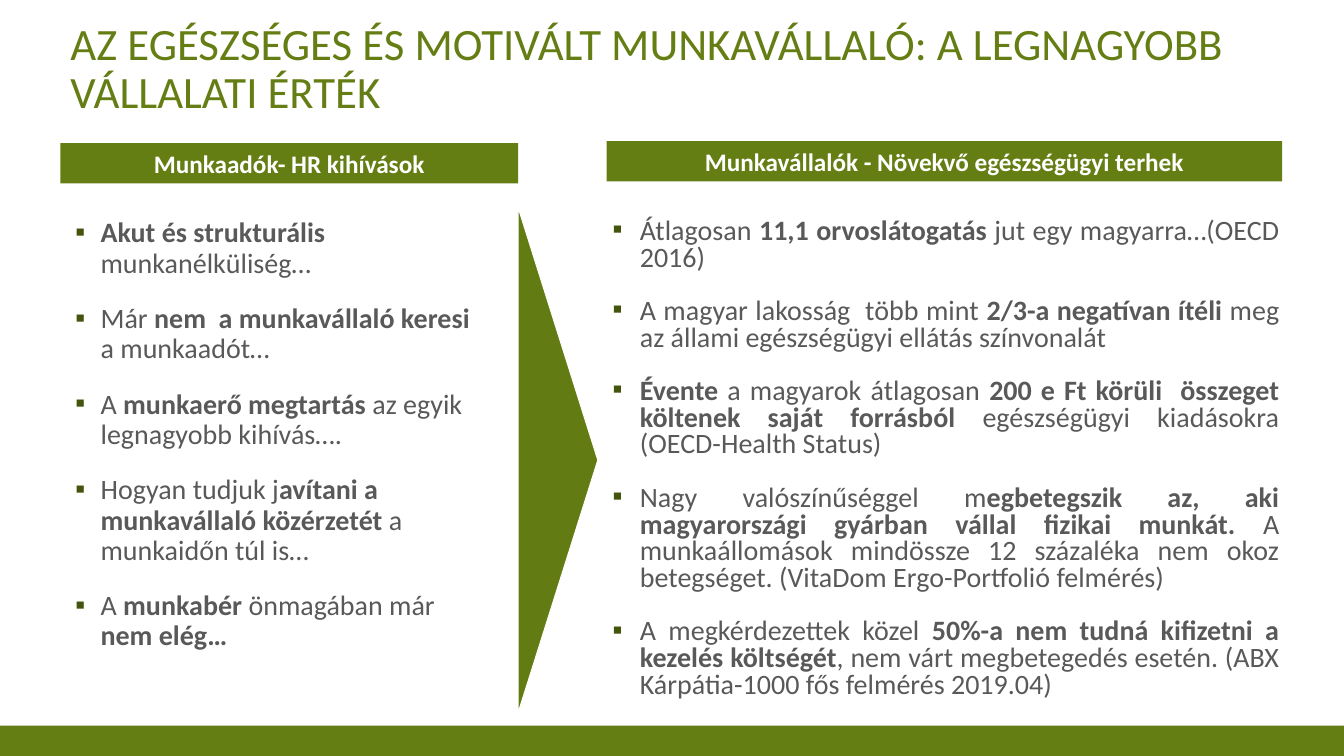
from lxml.etree import SubElement
from pptx import Presentation
from pptx.dml.color import RGBColor
from pptx.enum.shapes import MSO_SHAPE as SHAPE
from pptx.enum.text import MSO_ANCHOR as ANCHOR, PP_ALIGN as ALIGN
from pptx.oxml.ns import qn
from pptx.util import Pt

GREEN, ARROW_GREEN, BULLET_GREEN = "657E14", "627B13", "43540D"
GREY, WHITE = "595959", "FFFFFF"

EMPLOYERS = [
    "**Akut és strukturális **munkanélküliség…",
    "Már **nem  a munkavállaló keresi **a munkaadót…",
    "A **munkaerő megtartás** az egyik legnagyobb kihívás….",
    "Hogyan tudjuk j**avítani a munkavállaló közérzetét** a munkaidőn túl is…",
    "A **munkabér** önmagában már **nem elég…**",
]
EMPLOYEES = [
    "Átlagosan **11,1 orvoslátogatás** jut egy magyarra…(OECD 2016)",
    "A magyar lakosság  több mint **2/3-a negatívan ítéli** meg az állami "
    "egészségügyi ellátás színvonalát",
    "**Évente** a magyarok átlagosan **200 e Ft körüli  összeget költenek saját "
    "forrásból** egészségügyi kiadásokra (OECD-Health Status)",
    "Nagy valószínűséggel m**egbetegszik az, aki magyarországi gyárban vállal "
    "fizikai munkát. **A munkaállomások mindössze 12 százaléka nem okoz "
    "betegséget. (VitaDom Ergo-Portfolió felmérés)",
    "A megkérdezettek közel **50%-a nem tudná kifizetni a kezelés költségét**, "
    "nem várt megbetegedés esetén. (ABX Kárpátia-1000 fős felmérés 2019.04)",
]


def rgb(value):
    """Turn a hex string into a colour."""
    return RGBColor.from_string(value)


def set_all(obj, values):
    """Set every attribute in a dict of format values."""
    for name, value in values.items():
        setattr(obj, name, value)


def add_runs(p, text, size, color):
    """Write text whose bold parts stand between double asterisks."""
    for i, part in enumerate(text.split("**")):
        if part:
            r = p.add_run()
            r.text = part
            set_all(r.font, {"size": Pt(size), "name": "Calibri", "bold": i % 2 == 1})
            r.font.color.rgb = rgb(color)


def add_bullet(p, hanging):
    """Give a paragraph a green square bullet."""
    pPr = p._p.get_or_add_pPr()
    pPr.set("marL", str(Pt(21.6)))
    pPr.set("indent", str(-Pt(hanging)))
    SubElement(SubElement(pPr, qn("a:buClr")), qn("a:srgbClr"), val=BULLET_GREEN)
    SubElement(pPr, qn("a:buFont"), typeface="Calibri")
    SubElement(pPr, qn("a:buChar"), char="▪")


def add_block(s, shape, box, color):
    """Add a flat filled shape without an outline."""
    sp = s.shapes.add_shape(shape, *map(Pt, box))
    sp.shadow.inherit = False
    sp.fill.solid()
    sp.fill.fore_color.rgb = rgb(color)
    sp.line.fill.background()
    return sp


def add_header(s, box, text):
    """Add a green bar with a centred column heading."""
    sp = add_block(s, SHAPE.RECTANGLE, box, GREEN)
    sp.text_frame.vertical_anchor = ANCHOR.MIDDLE
    p = sp.text_frame.paragraphs[0]
    p.alignment = ALIGN.CENTER
    add_runs(p, f"**{text}**", 18, WHITE)


def add_text_box(s, box, anchor):
    """Add a wrapping text box and return its text frame."""
    tf = s.shapes.add_textbox(*map(Pt, box)).text_frame
    set_all(tf, {"word_wrap": True, "vertical_anchor": anchor})
    return tf


def add_title(s, box, text):
    """Add the slide title."""
    p = add_text_box(s, box, ANCHOR.MIDDLE).paragraphs[0]
    p.line_spacing = 0.9
    add_runs(p, text, 32, GREEN)


def add_list(s, box, items, hanging, gap, style):
    """Add a bulleted list with an even gap between its items."""
    tf = add_text_box(s, box, ANCHOR.TOP)
    for i, item in enumerate(items):
        p = tf.add_paragraph() if i else tf.paragraphs[0]
        add_bullet(p, hanging)
        set_all(p, {**style, "space_before": Pt(gap if i else 0)})
        add_runs(p, item, 20, GREY)


def add_arrow(s, box):
    """Add the triangle that points from the left column to the right one."""
    sp = add_block(s, SHAPE.ISOSCELES_TRIANGLE, box, ARROW_GREEN)
    sp.rotation = 90
    sp.line.color.rgb = rgb(WHITE)
    sp.line.width = Pt(0.75)


def main():
    """Build the slide and save it."""
    prs = Presentation()
    set_all(prs, {"slide_width": Pt(960), "slide_height": Pt(540)})
    s = prs.slides.add_slide(prs.slide_layouts[6])
    add_block(s, SHAPE.RECTANGLE, (0, 518.4, 960, 21.6), GREEN)
    add_title(s, (43.2, 21.6, 891.4, 56.9),
              "AZ EGÉSZSÉGES ÉS MOTIVÁLT MUNKAVÁLLALÓ: A LEGNAGYOBB VÁLLALATI ÉRTÉK")
    add_list(s, (43.2, 152.6, 307.4, 351.4), EMPLOYERS, 18, 18,
             {"line_spacing": 0.9, "alignment": ALIGN.LEFT})
    add_list(s, (428.4, 152.6, 492.5, 356.4), EMPLOYEES, 19.4, 18.75,
             {"line_spacing": 0.8, "alignment": ALIGN.JUSTIFY})
    add_arrow(s, (218.2, 300.2, 360.7, 56.9))
    add_header(s, (433.4, 100.8, 482.4, 28.8),
               "Munkavállalók - Növekvő egészségügyi terhek")
    add_header(s, (43.2, 102.2, 326.9, 28.8), "Munkaadók- HR kihívások")
    prs.save("out.pptx")


if __name__ == "__main__":
    main()
